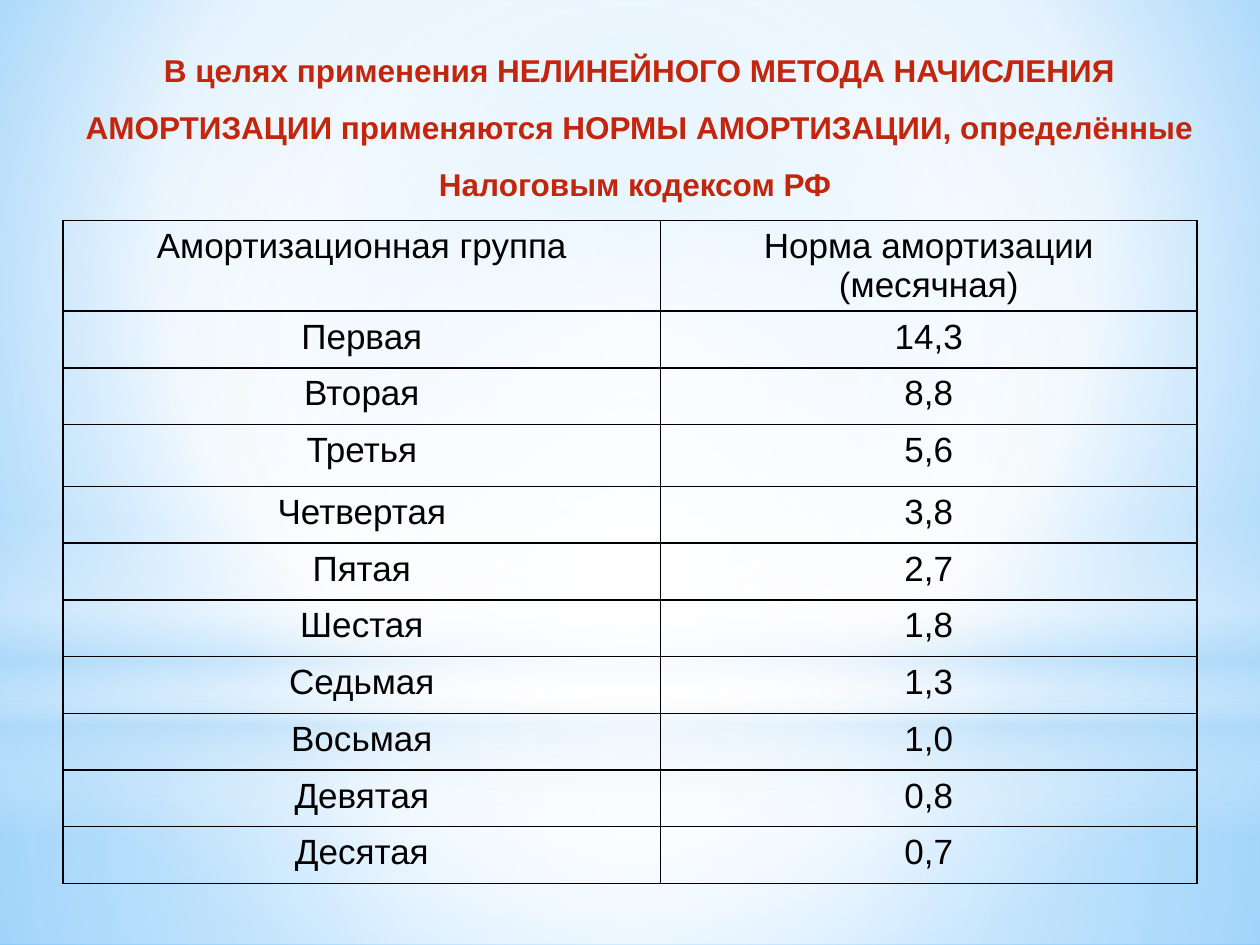
from lxml.etree import SubElement
from pptx import Presentation
from pptx.dml.color import RGBColor
from pptx.enum.shapes import MSO_SHAPE
from pptx.enum.text import MSO_AUTO_SIZE, PP_ALIGN
from pptx.oxml.ns import qn
from pptx.util import Pt

WHITE = RGBColor(0xFF, 0xFF, 0xFF)
PALE_BLUE = RGBColor(0xB4, 0xDC, 0xFA)
SKY_BLUE = RGBColor(0x9E, 0xD5, 0xFF)
DEEP_BLUE = RGBColor(0x5B, 0xB9, 0xFF)
RED = RGBColor(0xC3, 0x26, 0x0C)
BLACK = RGBColor(0, 0, 0)
CENTER = (50, 50, 50, 50)


def apply_gradient(properties, stops, focus=None):
    solid = properties.find(qn("a:solidFill"))
    gradient = SubElement(properties, qn("a:gradFill"), rotWithShape="1")
    properties.replace(solid, gradient)
    stop_list = SubElement(gradient, qn("a:gsLst"))
    for position, color, opacity in stops:
        stop = SubElement(stop_list, qn("a:gs"), pos=str(position * 1000))
        tone = SubElement(stop, qn("a:srgbClr"), val=str(color))
        if opacity < 100:
            SubElement(tone, qn("a:alpha"), val=str(opacity * 1000))
    if focus:
        circle = SubElement(gradient, qn("a:path"), path="circle")
        edges = {edge: str(value * 1000) for edge, value in zip("ltrb", focus)}
        SubElement(circle, qn("a:fillToRect"), **edges)
    else:
        SubElement(gradient, qn("a:lin"), ang="5400000", scaled="0")


def style_text(paragraph, size, color, bold):
    paragraph.alignment = PP_ALIGN.CENTER
    for run in paragraph.runs:
        run.font.name = "Arial"
        run.font.size = Pt(size)
        run.font.bold = bold
        run.font.color.rgb = color


presentation = Presentation()
presentation.slide_width = Pt(720)
presentation.slide_height = Pt(540)
slide = presentation.slides.add_slide(presentation.slide_layouts[6])

slide.background.fill.solid()
apply_gradient(
    slide.element.find(".//" + qn("p:bgPr")),
    [(0, SKY_BLUE, 100), (60, WHITE, 100), (100, DEEP_BLUE, 100)],
    (20, 10, 20, 60),
)

backdrop = [
    (MSO_SHAPE.RECTANGLE, 402, 138, CENTER,
     [(0, WHITE, 91), (37, WHITE, 76), (100, PALE_BLUE, 79)]),
    (MSO_SHAPE.RECTANGLE, 0, 402, CENTER,
     [(0, WHITE, 89), (48, WHITE, 62), (100, PALE_BLUE, 79)]),
    (MSO_SHAPE.RECTANGLE, 297, 180, None,
     [(0, WHITE, 0), (29, WHITE, 30), (45, PALE_BLUE, 40),
      (55, WHITE, 26), (65, PALE_BLUE, 60), (100, WHITE, 0)]),
    (MSO_SHAPE.OVAL, 126, 402, CENTER, [(0, WHITE, 100), (56, WHITE, 0)]),
]
for outline, top, height, focus, stops in backdrop:
    glow = slide.shapes.add_shape(outline, 0, Pt(top), Pt(720), Pt(height))
    glow.shadow.inherit = False
    glow.line.fill.background()
    glow.fill.solid()
    apply_gradient(glow.element.spPr, stops, focus)

rates = [
    ("Амортизационная группа", "Норма амортизации (месячная)"),
    ("Первая", "14,3"),
    ("Вторая", "8,8"),
    ("Третья", "5,6"),
    ("Четвертая", "3,8"),
    ("Пятая", "2,7"),
    ("Шестая", "1,8"),
    ("Седьмая", "1,3"),
    ("Восьмая", "1,0"),
    ("Девятая", "0,8"),
    ("Десятая", "0,7"),
]
rate_table = slide.shapes.add_table(
    len(rates), 2, Pt(36), Pt(126), Pt(648), Pt(360)
).table
rate_table.first_row = False
rate_table.horz_banding = False
rate_table.columns[0].width = Pt(341.5)
rate_table.columns[1].width = Pt(306.5)
for row_index, entries in enumerate(rates):
    rate_table.rows[row_index].height = Pt(35.4 if row_index == 3 else 32.4)
    for column_index, entry in enumerate(entries):
        cell = rate_table.cell(row_index, column_index)
        cell.text_frame.text = entry
        style_text(cell.text_frame.paragraphs[0], 20, BLACK, False)
        cell_properties = cell._tc.get_or_add_tcPr()
        for side in ("lnL", "lnR", "lnT", "lnB"):
            border = SubElement(cell_properties, qn("a:" + side), w=str(Pt(1)))
            ink = SubElement(border, qn("a:solidFill"))
            SubElement(ink, qn("a:srgbClr"), val=str(BLACK))
        cell.fill.background()

heading = slide.shapes.add_textbox(Pt(25.2), Pt(15.1), Pt(680.4), Pt(105.1))
heading.text_frame.word_wrap = True
heading.text_frame.auto_size = MSO_AUTO_SIZE.SHAPE_TO_FIT_TEXT
heading.text_frame.text = (
    "В целях применения НЕЛИНЕЙНОГО МЕТОДА НАЧИСЛЕНИЯ АМОРТИЗАЦИИ "
    "применяются НОРМЫ АМОРТИЗАЦИИ, определённые Налоговым кодексом РФ "
)
heading_paragraph = heading.text_frame.paragraphs[0]
heading_paragraph.line_spacing = 1.5
style_text(heading_paragraph, 18, RED, True)

presentation.save("out.pptx")
